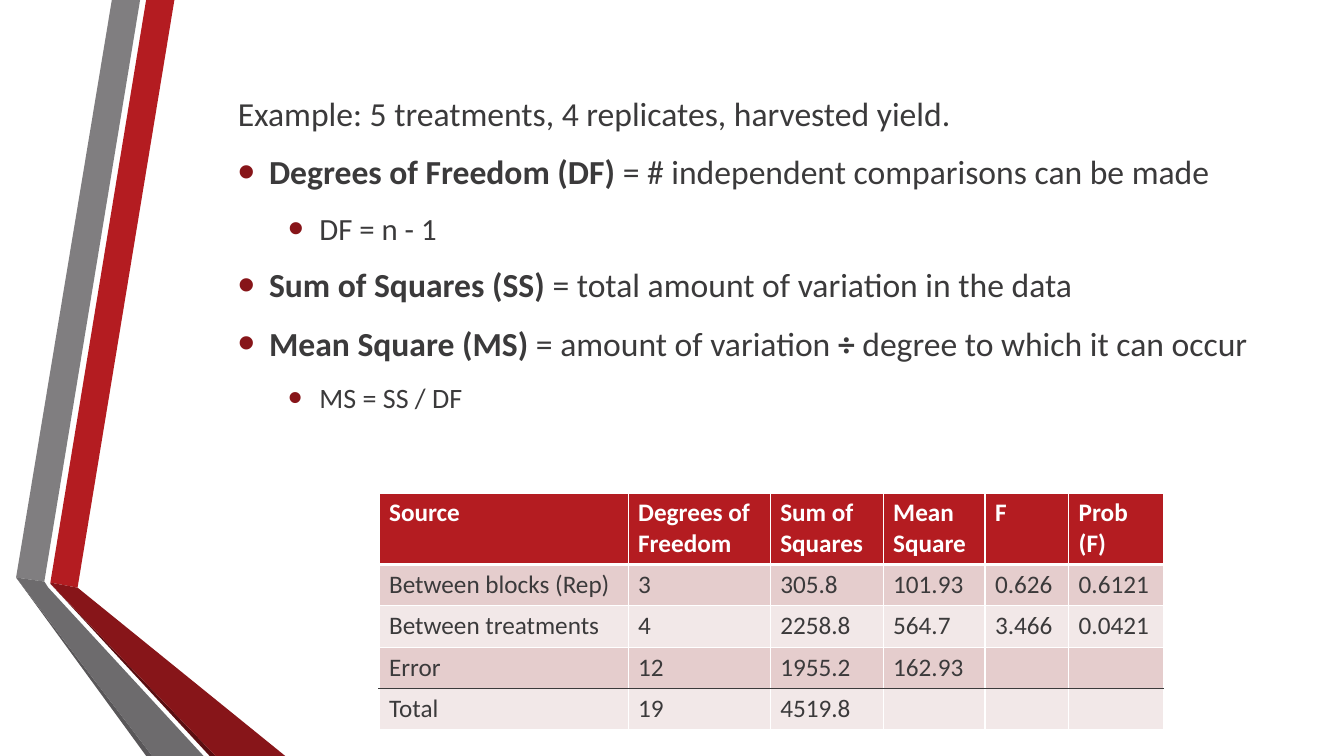
from typing import NamedTuple

from pptx import Presentation
from pptx.dml.color import RGBColor
from pptx.enum.text import MSO_ANCHOR
from pptx.oxml.ns import qn
from pptx.util import Inches, Pt
from lxml.etree import SubElement

FONT = "Calibri"
COLORS = {
    "red": "B41C21", "dark_red": "871519", "deep_red": "5A0E11",
    "gray": "807E80", "dark_gray": "6D6B6D", "deep_gray": "595759",
    "text": "3B3A3B", "white": "FFFFFF",
    "band_dark": "E5CDCD", "band_light": "F2E8E8",
}


class Ribbon(NamedTuple):
    color: str
    points: list[tuple[float, float]]


class Line(NamedTuple):
    runs: list[tuple[str, bool]]  # text, bold
    size: int = 24
    level: int = 0
    bullet: bool = True


RIBBONS = [
    Ribbon("red", [(0.5, 5.78), (0.77, 5.83), (1.73, 0), (1.45, 0)]),
    Ribbon("gray", [(1.39, 0), (1.11, 0), (0.16, 5.73), (0.44, 5.77)]),
    Ribbon("deep_gray", [(0.16, 5.73), (1.45, 7.5), (1.51, 7.5)]),
    Ribbon("deep_red", [(0.5, 5.79), (2.08, 7.5), (2.14, 7.5)]),
    Ribbon("dark_red", [(0.5, 5.78), (0.5, 5.79), (2.14, 7.5), (2.83, 7.5), (0.77, 5.83)]),
    Ribbon("dark_gray", [(2.02, 7.5), (0.48, 5.83), (0.44, 5.77), (0.16, 5.73), (1.51, 7.5)]),
]

LINES = [
    Line([("Example: 5 treatments, 4 replicates, harvested yield.", False)], bullet=False),
    Line([("Degrees of Freedom (DF) ", True),
          ("= # independent comparisons can be made", False)]),
    Line([("DF = n - 1", False)], size=22, level=1),
    Line([("Sum of Squares (SS) ", True),
          ("= total amount of variation in the data", False)]),
    Line([("Mean Square (MS) ", True), ("= amount of variation", False),
          (" ÷ ", True), ("degree to which it can occur", False)]),
    Line([("MS = SS / DF", False)], size=20, level=1),
]

COLUMN_WIDTHS = [2.47, 1.41, 1.12, 1.01, 0.83, 0.94]
ROW_HEIGHTS = [0.7] + [0.41] * 4
ANOVA = [
    ["Source", "Degrees of\vFreedom", "Sum of\nSquares", "Mean\vSquare", "F", "Prob\v(F)"],
    ["Between blocks (Rep)", "3", "305.8", "101.93", "0.626", "0.6121"],
    ["Between treatments", "4", "2258.8", "564.7", "3.466", "0.0421"],
    ["Error", "12", "1955.2", "162.93", "", ""],
    ["Total", "19", "4519.8", "", "", ""],
]
# Rules between rows: index of the row above -> colour, width
RULES = {0: ("white", 3), 3: ("text", 1)}
PLAIN_RULE = ("white", 1)


def rgb(name: str) -> RGBColor:
    return RGBColor.from_string(COLORS[name])


def style_run(r, size: int, color: str, bold: bool) -> None:
    r.font.name = FONT
    r.font.size = Pt(size)
    r.font.bold = bold
    r.font.color.rgb = rgb(color)


def draw_ribbon(s, ribbon: Ribbon) -> None:
    start, *rest = [(Inches(x), Inches(y)) for x, y in ribbon.points]
    builder = s.shapes.build_freeform(*start)
    builder.add_line_segments(rest, close=True)
    sp = builder.convert_to_shape()
    sp.shadow.inherit = False
    sp.fill.solid()
    sp.fill.fore_color.rgb = rgb(ribbon.color)
    sp.line.fill.background()


def add_bullet(p, level: int) -> None:
    pPr = p._p.get_or_add_pPr()
    pPr.set("marL", str(Inches(0.31 + 0.5 * level)))
    pPr.set("indent", str(Inches(-0.31)))
    color = SubElement(pPr, qn("a:buClr"))
    SubElement(color, qn("a:srgbClr"), val=COLORS["dark_red"])
    SubElement(pPr, qn("a:buSzPct"), val="145000")
    SubElement(pPr, qn("a:buFont"), typeface="Arial")
    SubElement(pPr, qn("a:buChar"), char="•")


def draw_body(s, lines: list[Line]) -> None:
    tf = s.shapes.add_textbox(Inches(2.26), Inches(0.51), Inches(10.81), Inches(3.97)).text_frame
    tf.word_wrap = True
    tf.vertical_anchor = MSO_ANCHOR.MIDDLE
    for i, line in enumerate(lines):
        p = tf.add_paragraph() if i else tf.paragraphs[0]
        p.level = line.level
        p.line_spacing = 1.1
        p.space_before = Pt(4 if i else 0)
        p.space_after = Pt(6)
        if line.bullet:
            add_bullet(p, line.level)
        for text, bold in line.runs:
            r = p.add_run()
            r.text = text
            style_run(r, line.size, "text", bold)


def set_borders(cell, row: int) -> None:
    tcPr = cell._tc.get_or_add_tcPr()
    sides = {"L": PLAIN_RULE, "R": PLAIN_RULE,
             "T": RULES.get(row - 1, PLAIN_RULE), "B": RULES.get(row, PLAIN_RULE)}
    for side, (color, width) in sides.items():
        ln = SubElement(tcPr, qn(f"a:ln{side}"), w=str(Pt(width)))
        fill = SubElement(ln, qn("a:solidFill"))
        SubElement(fill, qn("a:srgbClr"), val=COLORS[color])


def draw_table(s, rows: list[list[str]]) -> None:
    table = s.shapes.add_table(
        len(rows), len(COLUMN_WIDTHS), Inches(3.76), Inches(4.89),
        Inches(sum(COLUMN_WIDTHS)), Inches(sum(ROW_HEIGHTS))).table
    for column, width in zip(table.columns, COLUMN_WIDTHS):
        column.width = Inches(width)
    for i, values in enumerate(rows):
        table.rows[i].height = Inches(ROW_HEIGHTS[i])
        header = i == 0
        fill = "red" if header else "band_dark" if i % 2 else "band_light"
        for j, value in enumerate(values):
            cell = table.cell(i, j)
            cell.text_frame.text = value
            for p in cell.text_frame.paragraphs:
                for r in p.runs:
                    style_run(r, 18, "white" if header else "text", header)
            set_borders(cell, i)
            cell.fill.solid()
            cell.fill.fore_color.rgb = rgb(fill)


def main() -> None:
    prs = Presentation()
    prs.slide_width, prs.slide_height = Inches(13.33), Inches(7.5)
    s = prs.slides.add_slide(prs.slide_layouts[6])

    # Folded ribbons on the left
    for ribbon in RIBBONS:
        draw_ribbon(s, ribbon)

    # Variance table and definitions
    draw_table(s, ANOVA)
    draw_body(s, LINES)

    prs.save("out.pptx")


if __name__ == "__main__":
    main()
